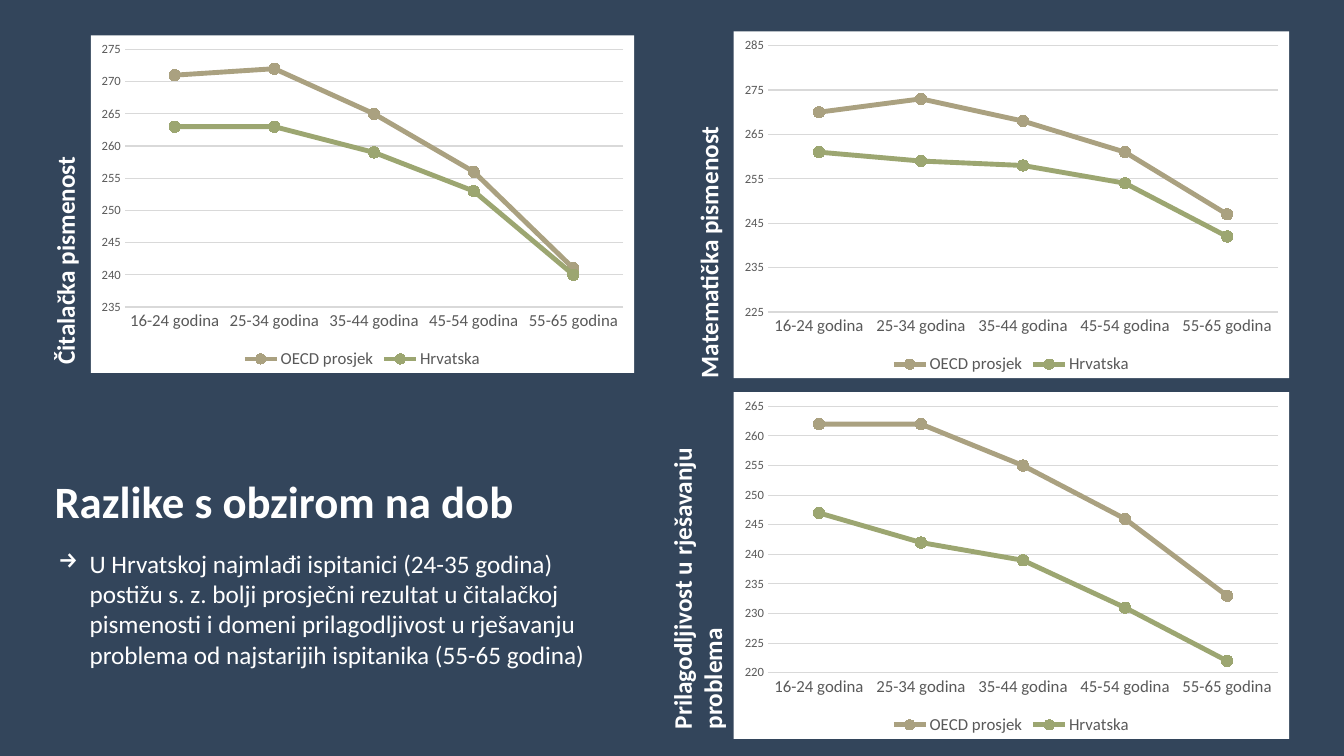
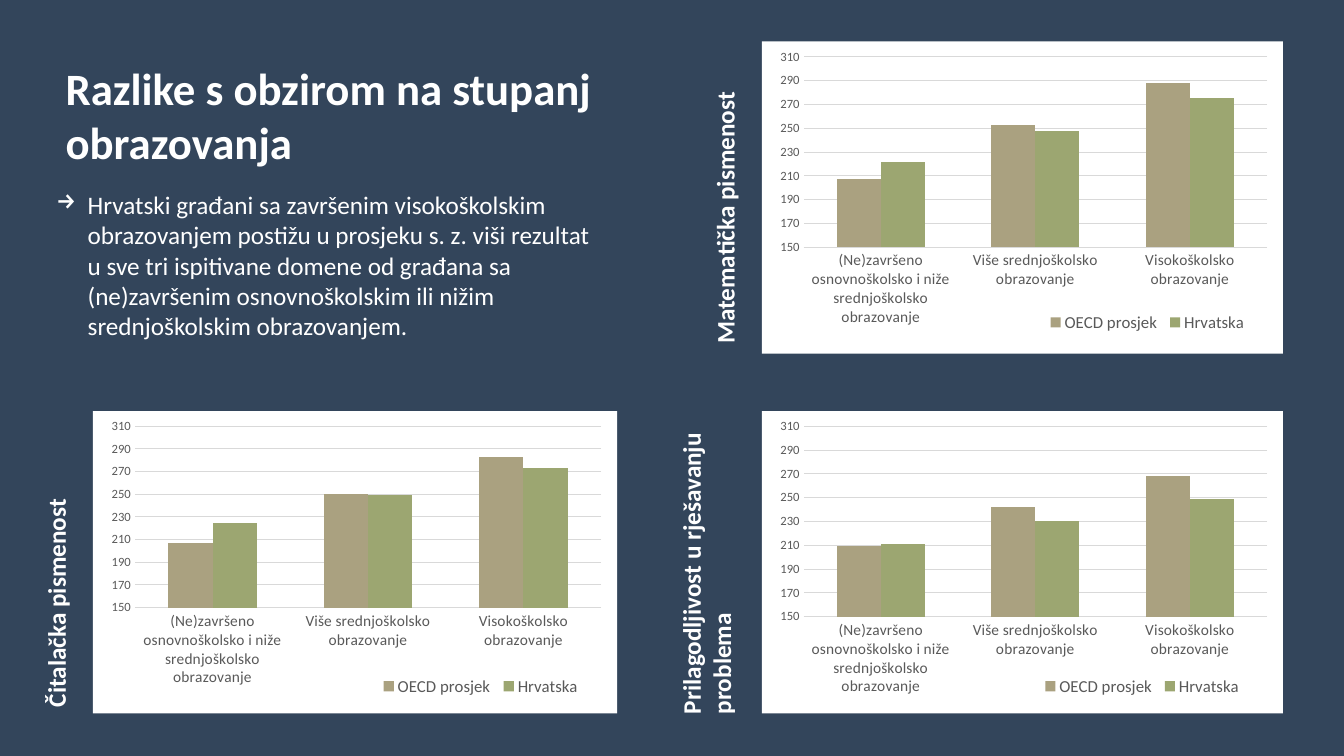
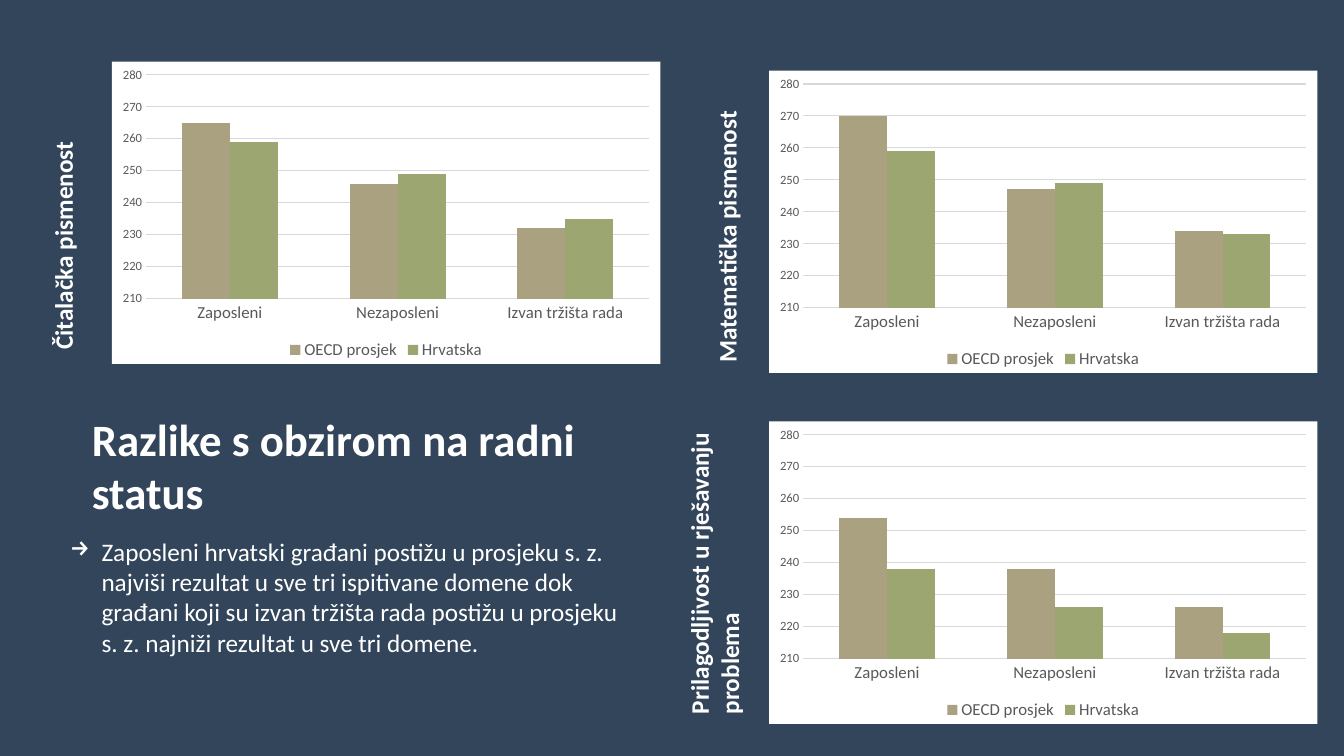
from dataclasses import dataclass

from lxml import etree
from pptx import Presentation
from pptx import util as u
from pptx.chart.data import CategoryChartData
from pptx.dml.color import RGBColor
from pptx.enum import chart as charts, text
from pptx.oxml import parse_xml
from pptx.oxml.ns import nsdecls, qn
from pptx.util import Cm


@dataclass(frozen=True)
class Theme:
    font: str = "Calibri"
    background: str = "33455B"
    white: str = "FFFFFF"
    label: str = "595959"
    grid: str = "D9D9D9"
    series: tuple = ("AAA180", "9CA671")
    title_size: int = 32
    body_size: int = 18
    chart_size: int = 10
    value_size: int = 9
    legend_size: int = 12
    series_width: float = 3.5
    marker_size: int = 8


THEME = Theme()
LINE = charts.XL_CHART_TYPE.LINE_MARKERS
COLUMN = charts.XL_CHART_TYPE.COLUMN_CLUSTERED
COUNTRIES = ("OECD prosjek", "Hrvatska")
TITLE_SIZE = (14.58, 3.68)
BODY_SIZE = (14.38, 4.11)
HANGING = Cm(0.79)

# Each literacy domain with the size of its caption before rotation
DOMAINS = (
    ("Čitalačka pismenost", (7.54, 1.02)),
    ("Matematička pismenost", (7.87, 1.02)),
    ("Prilagodljivost u rješavanju problema", (7.87, 1.8)),
)


@dataclass
class Panel:
    """One domain: caption corner, chart box, value scale and results (lengths in cm)."""
    caption: tuple
    box: tuple
    scale: tuple
    oecd: tuple
    croatia: tuple
    plot: tuple = None
    legend: tuple = None


@dataclass
class Comparison:
    title: str
    title_at: tuple
    body: str
    body_at: tuple
    kind: int
    categories: tuple
    category_size: int
    panels: tuple


COMPARISONS = (
    Comparison(
        "Razlike s obzirom na dob", (1.12, 10.77),
        "U Hrvatskoj najmlađi ispitanici (24-35 godina) postižu s. z. bolji prosječni "
        "rezultat u čitalačkoj pismenosti i domeni prilagodljivost u rješavanju problema "
        "od najstarijih ispitanika (55-65 godina)", (1.22, 13.69),
        LINE,
        ("16-24 godina", "25-34 godina", "35-44 godina", "45-54 godina", "55-65 godina"), 12,
        (
            Panel((-2.13, 5.16), (2.29, 0.89, 13.69, 8.51), (235, 275, 5),
                  (271, 272, 265, 256, 241), (263, 263, 259, 253, 240)),
            Panel((13.92, 5.33), (18.49, 0.79, 14, 8.74), (225, 285, 10),
                  (270, 273, 268, 261, 247), (261, 259, 258, 254, 242)),
            Panel((13.64, 13.79), (18.49, 9.88, 14, 8.74), (220, 265, 5),
                  (262, 262, 255, 246, 233), (247, 242, 239, 231, 222)),
        ),
    ),
    Comparison(
        "Razlike s obzirom na stupanj obrazovanja", (1.4, 1.04),
        "Hrvatski građani sa završenim visokoškolskim obrazovanjem postižu u prosjeku "
        "s. z. viši rezultat u sve tri ispitivane domene od građana sa (ne)završenim "
        "osnovnoškolskim ili nižim srednjoškolskim obrazovanjem.", (1.17, 4.65),
        COLUMN,
        ("(Ne)završeno osnovnoškolsko i niže srednjoškolsko obrazovanje",
         "Više srednjoškolsko obrazovanje", "Visokoškolsko obrazovanje"), 11,
        (
            Panel((-2.36, 13.79), (2.34, 10.36, 13.21, 7.62), (150, 310, 20),
                  (207, 250, 283), (225, 249, 273),
                  (0.08, 0.05, 0.89, 0.6), (0.54, 0.87, 0.4, 0.08)),
            Panel((14.33, 4.47), (19.2, 1.04, 13.13, 7.87), (150, 310, 20),
                  (207, 253, 288), (222, 248, 275),
                  (0.08, 0.05, 0.89, 0.61), (0.54, 0.86, 0.4, 0.08)),
            Panel((13.87, 13.41), (19.2, 10.36, 13.13, 7.62), (150, 310, 20),
                  (209, 242, 268), (211, 230, 249),
                  (0.08, 0.05, 0.89, 0.63), (0.53, 0.87, 0.4, 0.08)),
        ),
    ),
    Comparison(
        "Razlike s obzirom na radni status", (2.06, 9.88),
        "Zaposleni hrvatski građani postižu u prosjeku s. z. najviši rezultat u sve tri "
        "ispitivane domene dok građani koji su izvan tržišta rada postižu u prosjeku "
        "s. z. najniži rezultat u sve tri domene.", (1.52, 13.39),
        COLUMN,
        ("Zaposleni", "Nezaposleni", "Izvan tržišta rada"), 12,
        (
            Panel((-2.18, 4.78), (2.82, 1.55, 13.82, 7.62), (210, 280, 10),
                  (265, 246, 232), (259, 249, 235)),
            Panel((14.38, 4.95), (19.38, 1.78, 13.82, 7.62), (210, 280, 10),
                  (270, 247, 234), (259, 249, 233)),
            Panel((14.07, 13.41), (19.38, 10.62, 13.82, 7.62), (210, 280, 10),
                  (254, 238, 226), (238, 226, 218)),
        ),
    ),
)


def rgb(value):
    return RGBColor.from_string(value)


def cm_box(*lengths):
    return [Cm(length) for length in lengths]


def style_font(font, size, color=THEME.white, bold=False):
    font.color.rgb = rgb(color)
    for name, value in {"name": THEME.font, "size": u.Pt(size), "bold": bold}.items():
        setattr(font, name, value)


def paint(fill, color):
    fill.solid()
    fill.fore_color.rgb = rgb(color)


def add_title(slide, words, corner):
    title = slide.shapes.title
    for name, value in zip(("left", "top", "width", "height"), cm_box(*corner, *TITLE_SIZE)):
        setattr(title, name, value)
    frame = title.text_frame
    frame.text = words
    frame.auto_size = text.MSO_AUTO_SIZE.NONE
    frame.vertical_anchor = text.MSO_ANCHOR.MIDDLE
    frame.paragraphs[0].alignment = text.PP_ALIGN.LEFT
    style_font(frame.paragraphs[0].font, THEME.title_size, bold=True)


def add_text(slide, words, box, bold=False, rotation=0, bullet=None):
    holder = slide.shapes.add_textbox(*cm_box(*box))
    holder.rotation = rotation
    frame = holder.text_frame
    frame.word_wrap = True
    paragraph = frame.paragraphs[0]
    paragraph.text = words
    if bullet:
        properties = paragraph._p.get_or_add_pPr()
        properties.set("marL", str(HANGING))
        properties.set("indent", str(-HANGING))
        etree.SubElement(properties, qn("a:buChar")).set("char", bullet)
    style_font(paragraph.font, THEME.body_size, bold=bold)


def manual_layout(fractions, inner=False):
    target = '<c:layoutTarget val="inner"/>' if inner else ""
    modes = "".join(f'<c:{side}Mode val="edge"/>' for side in "xy")
    sizes = "".join(f'<c:{side} val="{part}"/>' for side, part in zip("xywh", fractions))
    return parse_xml(f'<c:layout {nsdecls("c")}><c:manualLayout>{target}{modes}{sizes}'
                     "</c:manualLayout></c:layout>")


def drop_layout(parent):
    for layout in parent.findall(qn("c:layout")):
        parent.remove(layout)


def place_parts(chart, panel):
    """Fix the plot area and the legend inside the chart."""
    plot_area = chart._chartSpace.chart.plotArea
    drop_layout(plot_area)
    plot_area.insert(0, manual_layout(panel.plot, inner=True))
    legend = chart.legend._element
    drop_layout(legend)
    legend.find(qn("c:legendPos")).addnext(manual_layout(panel.legend))


def fill_chart_area(chart, color):
    chart._chartSpace.find(qn("c:txPr")).addprevious(parse_xml(
        f'<c:spPr {nsdecls("c", "a")}><a:solidFill><a:srgbClr val="{color}"/></a:solidFill>'
        "<a:ln><a:noFill/></a:ln></c:spPr>"))


def style_axes(chart, category_size, scale):
    categories, values = chart.category_axis, chart.value_axis
    for axis, size in ((categories, category_size), (values, THEME.value_size)):
        axis.major_tick_mark = axis.minor_tick_mark = charts.XL_TICK_MARK.NONE
        style_font(axis.tick_labels.font, size, THEME.label)
    for name, value in zip(("minimum_scale", "maximum_scale", "major_unit"), scale):
        setattr(values, name, value)
    values.tick_labels.number_format = "0"
    values.tick_labels.number_format_is_linked = False
    values.format.line.fill.background()
    values.has_major_gridlines = True
    for line in (categories.format.line, values.major_gridlines.format.line):
        line.color.rgb = rgb(THEME.grid)
        line.width = u.Pt(0.75)


def style_series(chart, kind):
    plot = chart.plots[0]
    plot.vary_by_categories = False
    if kind == COLUMN:
        plot.gap_width, plot.overlap = 150, 0
    for series, color in zip(plot.series, THEME.series):
        if kind == COLUMN:
            paint(series.format.fill, color)
            continue
        series.smooth = False
        series.format.line.color.rgb = rgb(color)
        series.format.line.width = u.Pt(THEME.series_width)
        series.marker.style = charts.XL_MARKER_STYLE.CIRCLE
        series.marker.size = THEME.marker_size
        paint(series.marker.format.fill, color)
        series.marker.format.line.color.rgb = rgb(color)


def add_results(slide, comparison, panel):
    data = CategoryChartData(number_format="0")
    data.categories = comparison.categories
    for country, results in zip(COUNTRIES, (panel.oecd, panel.croatia)):
        data.add_series(country, results)
    chart = slide.shapes.add_chart(comparison.kind, *cm_box(*panel.box), data).chart
    chart.has_title = False
    style_font(chart.font, THEME.chart_size, "000000")
    fill_chart_area(chart, THEME.white)
    style_axes(chart, comparison.category_size, panel.scale)
    style_series(chart, comparison.kind)
    chart.has_legend = True
    chart.legend.position = charts.XL_LEGEND_POSITION.BOTTOM
    chart.legend.include_in_layout = False
    style_font(chart.legend.font, THEME.legend_size, THEME.label)
    if panel.plot:
        place_parts(chart, panel)


def add_comparison(deck, layout, comparison):
    slide = deck.slides.add_slide(layout)
    add_title(slide, comparison.title, comparison.title_at)
    add_text(slide, comparison.body, (*comparison.body_at, *BODY_SIZE), bullet="→")
    for (domain, size), panel in zip(DOMAINS, comparison.panels):
        add_results(slide, comparison, panel)
        add_text(slide, domain, (*panel.caption, *size), bold=True, rotation=270)


def main():
    deck = Presentation()
    deck.slide_width, deck.slide_height = cm_box(33.87, 19.05)
    paint(deck.slide_master.background.fill, THEME.background)
    title_only = deck.slide_layouts.get_by_name("Title Only")
    for comparison in COMPARISONS:
        add_comparison(deck, title_only, comparison)
    deck.save("out.pptx")


if __name__ == "__main__":
    main()
